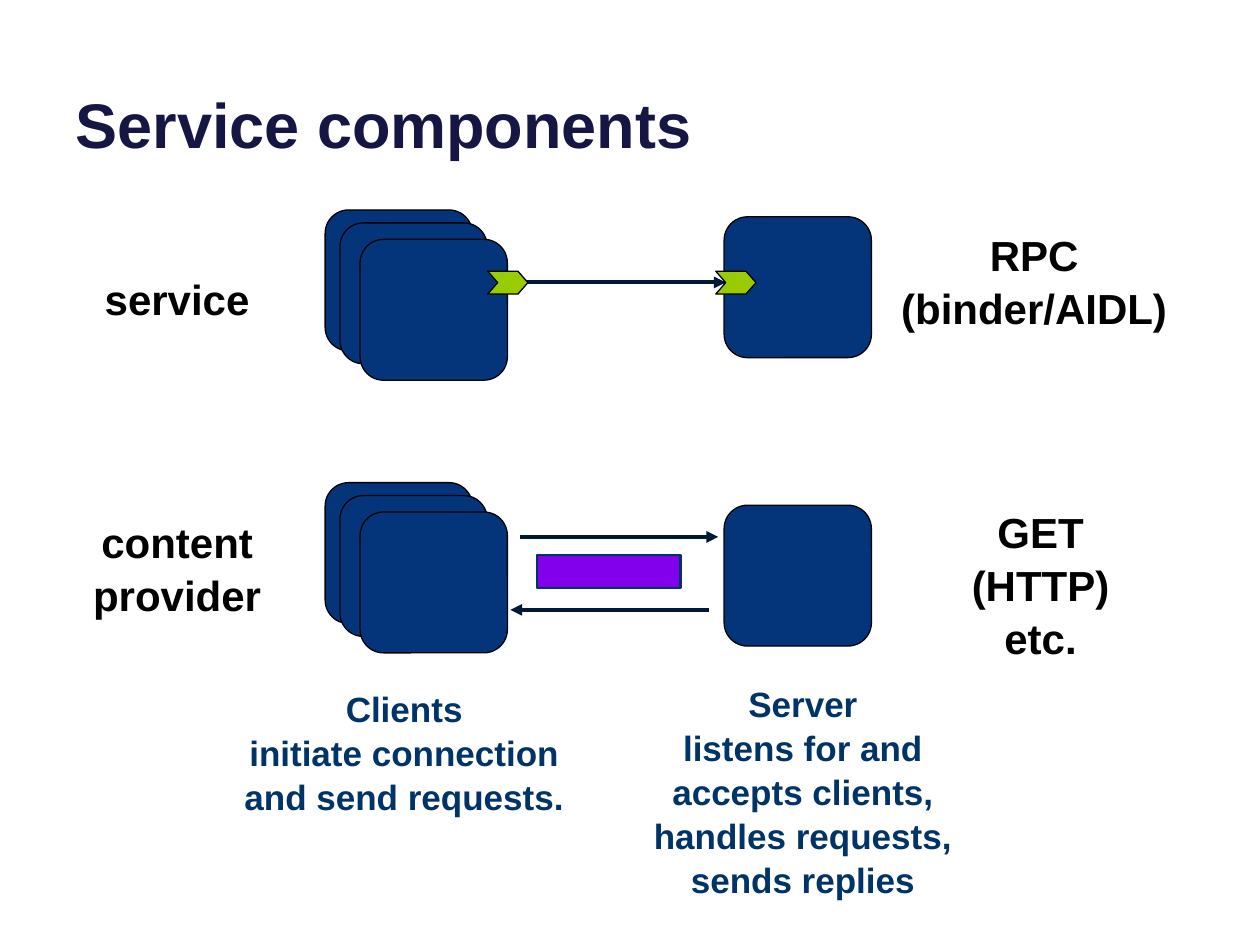
import pptx
import pptx.dml.color
import pptx.enum.shapes
import pptx.enum.text
import pptx.util
from pptx.oxml.ns import qn
from lxml import etree

Pt = pptx.util.Pt
SHAPES = pptx.enum.shapes.MSO_SHAPE
ALIGN = pptx.enum.text.PP_ALIGN
ANCHOR = pptx.enum.text.MSO_ANCHOR

COLORS = {
    "title": "161645",
    "label": "000000",
    "role": "003367",
    "box": "04357B",
    "outline": "000000",
    "port": "99CC00",
    "arrow": "001934",
    "data": "8300EC",
}
BOX_SIZE = (84.2, 80.5)
PORT_SIZE = (23, 13)
CLIENT_OFFSETS = [(0, 0), (8.5, 7.4), (20, 16.8)]
CLIENT_LEFT, SERVER_LEFT = 185.8, 413.8


def rgb(name):
    return pptx.dml.color.RGBColor.from_string(COLORS[name])


def write_text(frame, text, size=24, color="label", align=ALIGN.CENTER,
               anchor=ANCHOR.TOP, spacing=1.05):
    """Fill a text frame, one paragraph for each line of text."""
    frame.word_wrap = True
    frame.vertical_anchor = anchor
    frame.text = text
    for paragraph in frame.paragraphs:
        paragraph.alignment = align
        paragraph.line_spacing = spacing
        font = paragraph.runs[0].font
        font.name, font.size, font.bold = "Arial", Pt(size), True
        font.color.rgb = rgb(color)


def add_label(slide, text, left, top, width, height, **text_format):
    label = slide.shapes.add_textbox(Pt(left), Pt(top), Pt(width), Pt(height))
    write_text(label.text_frame, text, **text_format)


def add_figure(slide, kind, left, top, size, fill, line="outline", weight=0.75):
    figure = slide.shapes.add_shape(kind, Pt(left), Pt(top), Pt(size[0]), Pt(size[1]))
    figure.shadow.inherit = False
    figure.fill.solid()
    figure.fill.fore_color.rgb = rgb(fill)
    figure.line.color.rgb = rgb(line)
    figure.line.width = Pt(weight)
    return figure


def add_box(slide, left, top):
    add_figure(slide, SHAPES.ROUNDED_RECTANGLE, left, top, BOX_SIZE, "box")


def add_clients(slide, top):
    for dx, dy in CLIENT_OFFSETS:
        add_box(slide, CLIENT_LEFT + dx, top + dy)


def add_port(slide, left, top):
    port = add_figure(slide, SHAPES.CHEVRON, left, top, PORT_SIZE, "port")
    port.adjustments[0] = 0.44


def add_arrow(slide, start, end, y):
    arrow = slide.shapes.add_connector(
        pptx.enum.shapes.MSO_CONNECTOR.STRAIGHT, Pt(start), Pt(y), Pt(end), Pt(y))
    arrow.line.color.rgb = rgb("arrow")
    arrow.line.width = Pt(2.25)
    etree.SubElement(arrow.line._get_or_add_ln(), qn("a:tailEnd"), type="triangle")
    etree.SubElement(arrow._element.spPr, qn("a:effectLst"))


def add_title(slide):
    title = slide.shapes.title
    title.left, title.top = Pt(36), Pt(-26.6)
    title.width, title.height = Pt(648), Pt(122.4)
    write_text(title.text_frame, "Service components", size=36, color="title",
               align=ALIGN.LEFT, anchor=ANCHOR.BOTTOM, spacing=1)


def add_service_row(slide):
    add_box(slide, SERVER_LEFT, 123.9)
    add_arrow(slide, 301, 414.7, 161.4)
    add_port(slide, 409, 155)
    add_clients(slide, 120)
    add_port(slide, 278.7, 155)
    add_label(slide, "service", 34.6, 151.2, 133.2, 36.7)
    add_label(slide, "RPC\n(binder/AIDL)", 498, 126, 186, 65.5)


def add_provider_row(slide):
    add_box(slide, SERVER_LEFT, 288.7)
    add_clients(slide, 275.8)
    add_arrow(slide, 297, 410.4, 306.8)
    add_arrow(slide, 405, 291.6, 348.5)
    add_figure(slide, SHAPES.RECTANGLE, 306.8, 317.2, (82.2, 18.8), "data",
               line="role", weight=1.5)
    add_label(slide, "content provider", 34.6, 290.2, 133.2, 65.5)
    add_label(slide, "GET (HTTP)\netc.", 528, 284.4, 133.2, 94.3)


def add_roles(slide):
    role = {"size": 20, "color": "role"}
    add_label(slide, "Clients\ninitiate connection and send requests.",
              120, 388, 222, 80, **role)
    add_label(slide, "Server\nlistens for and accepts clients, handles requests, sends replies",
              347.8, 385.2, 222, 129, **role)


def main():
    deck = pptx.Presentation()
    deck.slide_width, deck.slide_height = Pt(720), Pt(540)
    slide = deck.slides.add_slide(deck.slide_layouts.get_by_name("Title Only"))
    add_title(slide)
    add_service_row(slide)
    add_provider_row(slide)
    add_roles(slide)
    deck.save("out.pptx")


if __name__ == "__main__":
    main()
